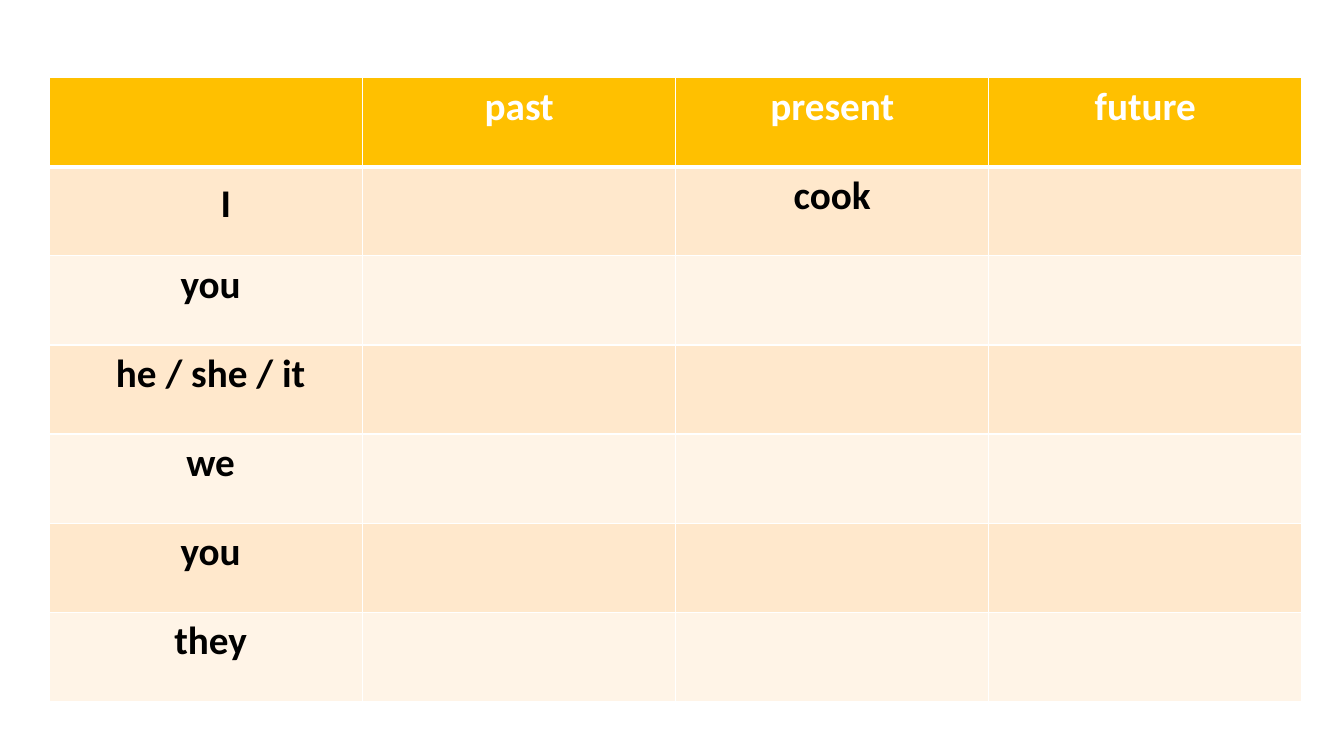
from lxml.etree import SubElement
from pptx import Presentation
from pptx.dml.color import RGBColor
from pptx.enum.text import PP_ALIGN as Align
from pptx.oxml.ns import qn
from pptx.util import Pt

WHITE = RGBColor(0xFF, 0xFF, 0xFF)
BLACK = RGBColor(0x00, 0x00, 0x00)
AMBER = RGBColor(0xFF, 0xC0, 0x00)
PEACH = RGBColor(0xFF, 0xE8, 0xCC)
CREAM = RGBColor(0xFF, 0xF4, 0xE7)

TENSES = ["", "past", "present", "future"]
PRONOUNS = ["　I", " you", " he / she / it", " we", " you", " they"]
VERB_FORMS = {("　I", "present"): "cook"}


class ConjugationSlide:
    font = "Calibri"
    size = Pt(28)

    def __init__(self, deck):
        self.slide = deck.slides.add_slide(deck.slide_layouts[6])

    def table(self, rows, left, top, column_width, row_height):
        row_count, column_count = len(rows), len(rows[0])
        grid = self.slide.shapes.add_table(
            row_count, column_count, Pt(left), Pt(top),
            Pt(column_width * column_count), Pt(row_height * row_count)).table
        for column in grid.columns:
            column.width = Pt(column_width)
        for row_index, words in enumerate(rows):
            grid.rows[row_index].height = Pt(row_height)
            for column_index, word in enumerate(words):
                self.cell(grid.cell(row_index, column_index), word, row_index)

    def cell(self, cell, word, row_index):
        is_header = row_index == 0
        self.borders(cell, top=3 if row_index == 1 else 1,
                     bottom=3 if is_header else 1)
        cell.fill.solid()
        cell.fill.fore_color.rgb = (
            AMBER if is_header else PEACH if row_index % 2 else CREAM)
        paragraph = cell.text_frame.paragraphs[0]
        paragraph.alignment = Align.CENTER
        if word:
            run = paragraph.add_run()
            run.text = word
            run.font.name = self.font
            run.font.size = self.size
            run.font.bold = True
            run.font.color.rgb = WHITE if is_header else BLACK

    def borders(self, cell, top, bottom):
        properties = cell._tc.get_or_add_tcPr()
        for side, width in (("L", 1), ("R", 1), ("T", top), ("B", bottom)):
            line = SubElement(properties, qn(f"a:ln{side}"), w=str(Pt(width)))
            fill = SubElement(line, qn("a:solidFill"))
            SubElement(fill, qn("a:srgbClr"), val=str(WHITE))


def main():
    deck = Presentation()
    deck.slide_width, deck.slide_height = Pt(960), Pt(540)
    verb_rows = [
        [pronoun] + [VERB_FORMS.get((pronoun, tense), "") for tense in TENSES[1:]]
        for pronoun in PRONOUNS]
    ConjugationSlide(deck).table(
        [TENSES] + verb_rows, left=35.5, top=55.5,
        column_width=223.6, row_height=63.65)
    deck.save("out.pptx")


if __name__ == "__main__":
    main()
